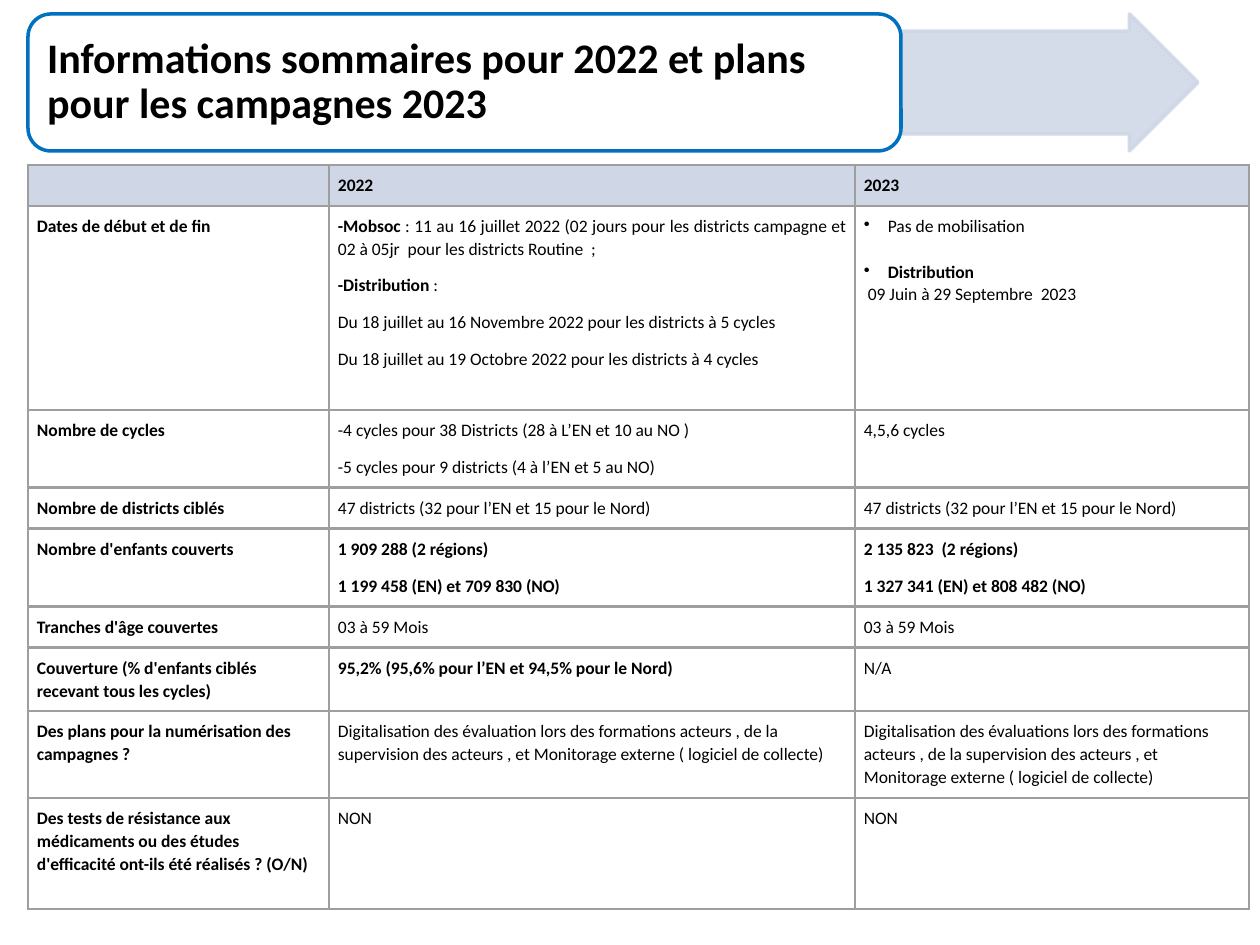
from dataclasses import dataclass

from lxml.etree import SubElement
from pptx import Presentation
from pptx.dml.color import RGBColor
from pptx.enum.shapes import MSO_SHAPE
from pptx.enum.text import MSO_ANCHOR, PP_ALIGN
from pptx.oxml import parse_xml
from pptx.oxml.ns import nsdecls, qn
from pptx.util import Emu, Pt

SCALE = 914400 / 126
FONT = "Calibri"
BLACK, WHITE, BLUE, PALE, GREY = "000000", "FFFFFF", "0070C0", "CFD7E7", "9E9E9E"
WIDTHS = [301, 526, 394]
HEIGHTS = [40, 204, 78, 41, 78, 41, 63, 87, 111]


@dataclass
class Para:
    bold: str = ""
    plain: str = ""
    bullet: bool = False
    just: bool = False
    before: int = 0
    after: int = 8


@dataclass
class Block:
    kind: MSO_SHAPE
    left: int
    width: int
    adjust: list[float]
    fill: str
    line: str
    alpha: int = 100


ARROW = Block(MSO_SHAPE.RIGHT_ARROW, 901, 297, [0.75, 0.5], PALE, PALE, 89)
TITLE = Block(MSO_SHAPE.ROUNDED_RECTANGLE, 28, 873, [0.167], WHITE, BLUE)

ROWS = [
    [[Para()], [Para("2022")], [Para("2023")]],
    [
        [Para("Dates de début et de fin")],
        [
            Para("-Mobsoc", " : 11 au 16 juillet 2022 (02 jours pour les districts "
                 "campagne et 02 à 05jr  pour les districts Routine  ;", just=True),
            Para("-Distribution", " : ", just=True),
            Para(plain="Du 18 juillet au 16 Novembre 2022 pour les districts à 5 cycles", just=True),
            Para(plain="Du 18 juillet au 19 Octobre 2022 pour les districts à 4 cycles", just=True),
        ],
        [
            Para(plain="Pas de mobilisation", bullet=True, after=0),
            Para("Distribution", bullet=True, before=13, after=0),
            Para(plain=" 09 Juin à 29 Septembre  2023", after=0),
        ],
    ],
    [
        [Para("Nombre de cycles")],
        [
            Para(plain="-4 cycles pour 38 Districts (28 à L’EN et 10 au NO )"),
            Para(plain="-5 cycles pour 9 districts (4 à l’EN et 5 au NO)"),
        ],
        [Para(plain="4,5,6 cycles")],
    ],
    [
        [Para("Nombre de districts ciblés")],
        *[[Para(plain="47 districts (32 pour l’EN et 15 pour le Nord)")]] * 2,
    ],
    [
        [Para("Nombre d'enfants couverts")],
        [Para("1 909 288 (2 régions)"), Para("1 199 458 (EN) et 709 830 (NO)")],
        [Para("2 135 823  (2 régions)"), Para("1 327 341 (EN) et 808 482 (NO)")],
    ],
    [[Para("Tranches d'âge couvertes")], *[[Para(plain="03 à 59 Mois")]] * 2],
    [
        [Para("Couverture (% d'enfants ciblés recevant tous les cycles)")],
        [Para("95,2% (95,6% pour l’EN et 94,5% pour le Nord)")],
        [Para(plain="N/A")],
    ],
    [
        [Para("Des plans pour la numérisation des campagnes ?")],
        *[
            [Para(plain=f"Digitalisation des {noun} lors des formations acteurs , de la "
                  "supervision des acteurs , et Monitorage externe ( logiciel de collecte)")]
            for noun in ("évaluation", "évaluations")
        ],
    ],
    [
        [Para("Des tests de résistance aux médicaments ou des études "
              "d'efficacité ont-ils été réalisés ? (O/N)")],
        *[[Para(plain="NON")]] * 2,
    ],
]


def px(count: int) -> Emu:
    return Emu(round(count * SCALE))


def hue(code: str) -> RGBColor:
    return RGBColor.from_string(code)


def style(para, size: int, bold: bool) -> None:
    font = para.font
    font.name, font.size, font.bold = FONT, Pt(size), bold
    font.color.rgb = hue(BLACK)


def draw(slide, block: Block):
    shape = slide.shapes.add_shape(block.kind, px(block.left), px(14), px(block.width), px(137))
    shape.shadow.inherit = False
    for index, value in enumerate(block.adjust):
        shape.adjustments[index] = value
    shape.fill.solid()
    shape.fill.fore_color.rgb = hue(block.fill)
    shape.line.color.rgb = hue(block.line)
    shape.line.width = Pt(2)
    if block.alpha < 100:
        for color in shape._element.spPr.iter(qn("a:srgbClr")):
            SubElement(color, qn("a:alpha")).set("val", str(block.alpha * 1000))
    return shape


def write(para, data: Para) -> None:
    para.alignment = PP_ALIGN.JUSTIFY if data.just else PP_ALIGN.LEFT
    para.line_spacing = 1.07
    para.space_before, para.space_after = Pt(data.before), Pt(data.after)
    if data.bullet:
        props = para._p.get_or_add_pPr()
        props.set("marL", str(px(24)))
        props.set("indent", str(-px(24)))
        SubElement(props, qn("a:buChar")).set("char", "•")
    style(para, 10, not data.plain)
    for text, bold in ((data.bold, True), (data.plain, False)):
        if text:
            run = para.add_run()
            run.text = text
            if data.bold and data.plain:
                run.font.bold = bold
    if not para.runs:
        SubElement(para._p, qn("a:endParaRPr")).set("sz", "1000")


def border(cell) -> None:
    props = cell._tc.get_or_add_tcPr()
    for index, side in enumerate("LRTB"):
        props.insert(index, parse_xml(
            f'<a:ln{side} {nsdecls("a")} w="{Pt(1.5)}"><a:solidFill>'
            f'<a:srgbClr val="{GREY}"/></a:solidFill></a:ln{side}>'))


def fill(cell, paras: list[Para], head: bool) -> None:
    cell.margin_left = cell.margin_right = px(9)
    cell.margin_top = cell.margin_bottom = px(9)
    if head:
        cell.fill.solid()
        cell.fill.fore_color.rgb = hue(PALE)
    else:
        cell.fill.background()
    border(cell)
    frame = cell.text_frame
    for index, data in enumerate(paras):
        write(frame.add_paragraph() if index else frame.paragraphs[0], data)


def grid(slide) -> None:
    table = slide.shapes.add_table(
        len(ROWS), len(WIDTHS), px(28), px(165), px(sum(WIDTHS)), px(sum(HEIGHTS))).table
    table.first_row = table.horz_banding = False
    for column, width in zip(table.columns, WIDTHS):
        column.width = px(width)
    for index, (row, height) in enumerate(zip(table.rows, HEIGHTS)):
        row.height = px(height)
        for cell, paras in zip(row.cells, ROWS[index]):
            fill(cell, paras, index == 0)


def main() -> None:
    deck = Presentation()
    deck.slide_width, deck.slide_height = px(1260), px(945)
    slide = deck.slides.add_slide(deck.slide_layouts[6])
    draw(slide, ARROW)
    frame = draw(slide, TITLE).text_frame
    frame.word_wrap = True
    frame.vertical_anchor = MSO_ANCHOR.MIDDLE
    para = frame.paragraphs[0]
    para.text = "Informations sommaires pour 2022 et plans pour les campagnes 2023"
    para.alignment, para.line_spacing = PP_ALIGN.LEFT, 0.9
    style(para, 24, True)
    grid(slide)
    deck.save("out.pptx")


if __name__ == "__main__":
    main()
